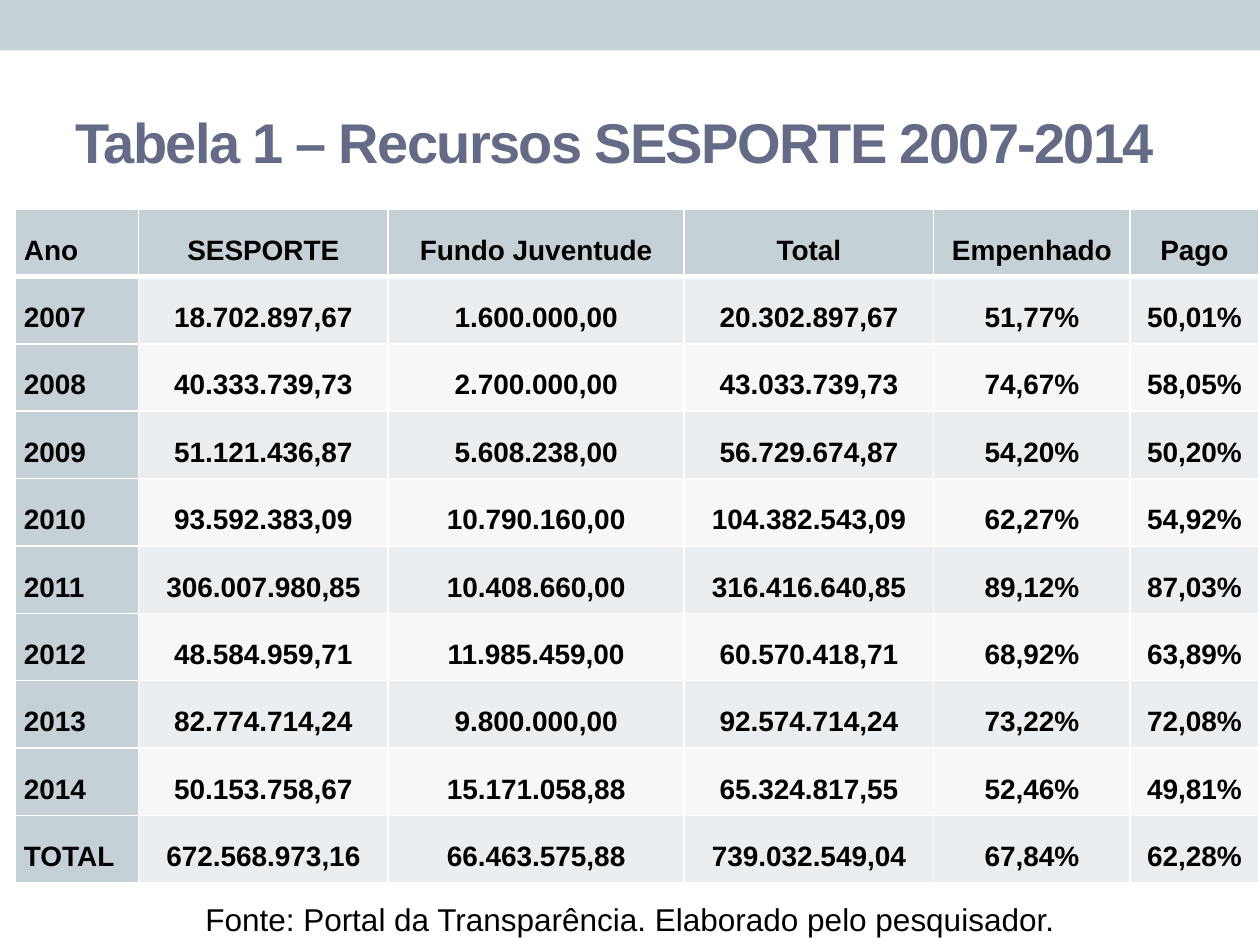
from lxml import etree
from pptx import Presentation
from pptx import util as u
from pptx.dml.color import RGBColor
from pptx.enum import shapes, text
from pptx.oxml import ns

WHITE = RGBColor(0xFF, 0xFF, 0xFF)
BLACK = RGBColor(0x00, 0x00, 0x00)
SLATE = RGBColor(0x64, 0x6B, 0x86)
GREY_BLUE = RGBColor(0xC5, 0xD1, 0xD7)
BAND_DARK = RGBColor(0xEA, 0xEE, 0xF0)
BAND_LIGHT = RGBColor(0xF5, 0xF7, 0xF8)

COLUMN_WIDTHS = [0.98, 1.98, 2.35, 1.98, 1.56, 1.02]
ROW_HEIGHT = 0.535
ROWS = [
    ["Ano", "SESPORTE", "Fundo Juventude", "Total", "Empenhado", "Pago"],
    ["2007", "18.702.897,67", "1.600.000,00", "20.302.897,67", "51,77%", "50,01%"],
    ["2008", "40.333.739,73", "2.700.000,00", "43.033.739,73", "74,67%", "58,05%"],
    ["2009", "51.121.436,87", "5.608.238,00", "56.729.674,87", "54,20%", "50,20%"],
    ["2010", "93.592.383,09", "10.790.160,00", "104.382.543,09", "62,27%", "54,92%"],
    ["2011", "306.007.980,85", "10.408.660,00", "316.416.640,85", "89,12%", "87,03%"],
    ["2012", "48.584.959,71", "11.985.459,00", "60.570.418,71", "68,92%", "63,89%"],
    ["2013", "82.774.714,24", "9.800.000,00", "92.574.714,24", "73,22%", "72,08%"],
    ["2014", "50.153.758,67", "15.171.058,88", "65.324.817,55", "52,46%", "49,81%"],
    ["TOTAL", "672.568.973,16", "66.463.575,88", "739.032.549,04", "67,84%", "62,28%"],
]


class SlideBuilder:
    font_name = "Arial"

    def __init__(self, slide):
        self.slide = slide

    def format_text(self, paragraph, size, color, bold=False,
                    align=text.PP_ALIGN.LEFT, line_spacing=1.0):
        paragraph.alignment = align
        paragraph.line_spacing = line_spacing
        for run in paragraph.runs:
            run.font.name = self.font_name
            run.font.size = u.Pt(size)
            run.font.bold = bold
            run.font.color.rgb = color

    def band(self, left, top, width, height, color):
        shape = self.slide.shapes.add_shape(
            shapes.MSO_SHAPE.RECTANGLE, *map(u.Inches, (left, top, width, height)))
        shape.shadow.inherit = False
        shape.fill.solid()
        shape.fill.fore_color.rgb = color
        shape.line.fill.background()

    def title(self, words, left, top, width, height):
        title = self.slide.shapes.title
        title.left, title.top = u.Inches(left), u.Inches(top)
        title.width, title.height = u.Inches(width), u.Inches(height)
        frame = title.text_frame
        frame.text = words
        frame.vertical_anchor = text.MSO_ANCHOR.MIDDLE
        self.format_text(frame.paragraphs[0], 32, SLATE, bold=True)
        for run in frame.paragraphs[0].runs:
            run.font._element.set("spc", "-100")

    def cell_borders(self, cell, top, bottom):
        properties = cell._tc.get_or_add_tcPr()
        for side, width in (("L", 1), ("R", 1), ("T", top), ("B", bottom)):
            line = etree.SubElement(properties, ns.qn(f"a:ln{side}"), w=str(u.Pt(width)))
            fill = etree.SubElement(line, ns.qn("a:solidFill"))
            etree.SubElement(fill, ns.qn("a:srgbClr"), val=str(WHITE))

    def table(self, rows, left, top, column_widths, row_height):
        table = self.slide.shapes.add_table(
            len(rows), len(column_widths), u.Inches(left), u.Inches(top),
            u.Inches(sum(column_widths)), u.Inches(row_height * len(rows))).table
        for column, width in zip(table.columns, column_widths):
            column.width = u.Inches(width)
        for r, values in enumerate(rows):
            table.rows[r].height = u.Inches(row_height)
            for c, value in enumerate(values):
                self.table_cell(table.cell(r, c), value, r, c)

    def table_cell(self, cell, value, row, column):
        cell.text_frame.text = value
        cell.vertical_anchor = text.MSO_ANCHOR.MIDDLE
        cell.margin_left = cell.margin_right = u.Inches(0.07)
        cell.margin_top = cell.margin_bottom = 0
        align = text.PP_ALIGN.CENTER if column else text.PP_ALIGN.LEFT
        self.format_text(cell.text_frame.paragraphs[0], 16, BLACK, True, align, 1.5)
        # A thicker rule parts the header from the body
        self.cell_borders(cell, top=3 if row == 1 else 1, bottom=3 if row == 0 else 1)
        cell.fill.solid()
        if row == 0 or column == 0:
            cell.fill.fore_color.rgb = GREY_BLUE
        else:
            cell.fill.fore_color.rgb = BAND_DARK if row % 2 else BAND_LIGHT

    def source_note(self, words, left, top, width, height):
        box = self.slide.shapes.add_textbox(*map(u.Inches, (left, top, width, height)))
        frame = box.text_frame
        frame.word_wrap = True
        frame.auto_size = text.MSO_AUTO_SIZE.SHAPE_TO_FIT_TEXT
        frame.text = words
        paragraph = frame.paragraphs[0]
        paragraph.space_after = u.Pt(24)
        self.format_text(paragraph, 18, BLACK, align=text.PP_ALIGN.CENTER, line_spacing=1.5)


def main():
    presentation = Presentation()
    presentation.slide_width = u.Inches(10)
    presentation.slide_height = u.Inches(7.5)
    builder = SlideBuilder(presentation.slides.add_slide(presentation.slide_layouts[5]))

    # Top band and title
    builder.band(0, 0, 10, 0.4, GREY_BLUE)
    builder.title("Tabela 1 – Recursos SESPORTE 2007-2014", 0.5, 0.58, 9, 1.08)

    # Yearly resources
    builder.table(ROWS, 0.12, 1.66, COLUMN_WIDTHS, ROW_HEIGHT)

    # Source
    builder.source_note("Fonte: Portal da Transparência. Elaborado pelo pesquisador.",
                        0.5, 6.94, 9, 0.56)

    presentation.save("out.pptx")


if __name__ == "__main__":
    main()
